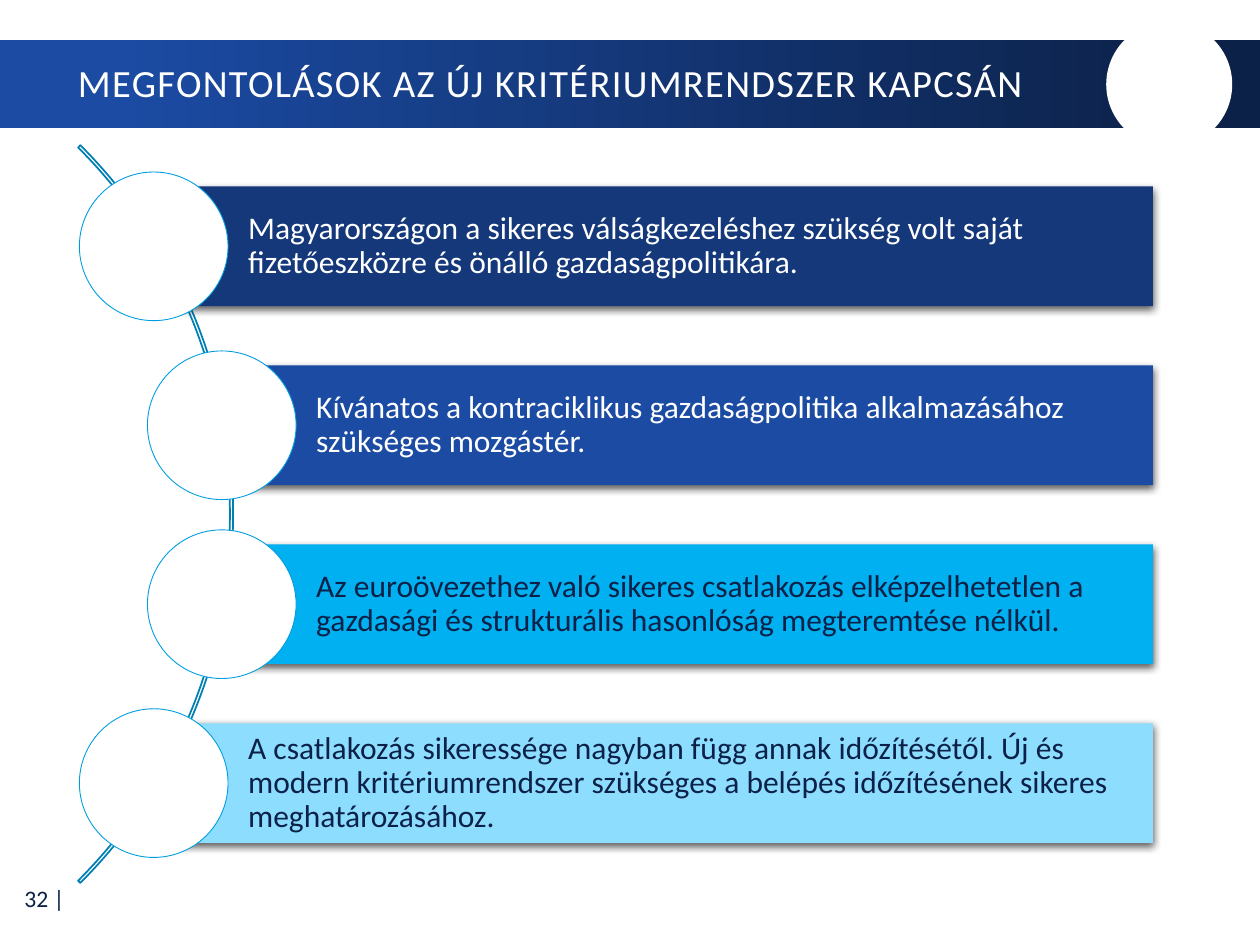
from lxml.etree import SubElement
from pptx import Presentation
from pptx.dml.color import RGBColor
from pptx.enum.shapes import MSO_SHAPE as Shape
from pptx.enum.text import MSO_ANCHOR as Anchor, PP_ALIGN as Align
from pptx.oxml.ns import qn
from pptx.util import Inches, Pt

COLORS = {
    "white": "FFFFFF",
    "navy": "0C2148",
    "deep": "14387A",
    "royal": "1B4BA3",
    "cyan": "00B0F0",
    "pale": "8DDDFF",
    "ring": "009EE0",
    "arc": "007FB3",
}

POINTS = [
    ("Magyarországon a sikeres válságkezeléshez szükség volt saját fizetőeszközre "
     "és önálló gazdaságpolitikára.", "deep", "white", 1.22),
    ("Kívánatos a kontraciklikus gazdaságpolitika alkalmazásához szükséges mozgástér.",
     "royal", "white", 1.76),
    ("Az euroövezethez való sikeres csatlakozás elképzelhetetlen a gazdasági és "
     "strukturális hasonlóság megteremtése nélkül.", "cyan", "navy", 1.76),
    ("A csatlakozás sikeressége nagyban függ annak időzítésétől. Új és modern "
     "kritériumrendszer szükséges a belépés időzítésének sikeres meghatározásához.",
     "pale", "navy", 1.22),
]

BAR_RIGHT, BAR_TOP, BAR_HEIGHT, BAR_PITCH = 9.15, 1.48, 0.95, 1.42
CIRCLE = 1.18


class Deck:
    font = "Calibri"

    def __init__(self, prs):
        self.s = prs.slides.add_slide(prs.slide_layouts[6])

    def color(self, name):
        return RGBColor.from_string(COLORS[name])

    def shape(self, kind, box, fill=None, line=None, width=1):
        sp = self.s.shapes.add_shape(kind, *map(Inches, box))
        sp.shadow.inherit = False
        if fill:
            sp.fill.solid()
            sp.fill.fore_color.rgb = self.color(fill)
        else:
            sp.fill.background()
        if line:
            sp.line.color.rgb = self.color(line)
            sp.line.width = Pt(width)
        else:
            sp.line.fill.background()
        return sp

    def gradient(self, box, stops):
        sp = self.shape(Shape.RECTANGLE, box)
        sp.fill.gradient()
        sp.fill.gradient_angle = 0
        for stop, (position, name) in zip(sp.fill.gradient_stops, stops):
            stop.position = position
            stop.color.rgb = self.color(name)

    def set_text(self, sp, text, size, color, align=Align.LEFT, spacing=0.9,
                 insets=(0.1, 0.05, 0.1, 0.05)):
        tf = sp.text_frame
        tf.word_wrap = True
        tf.vertical_anchor = Anchor.MIDDLE
        (tf.margin_left, tf.margin_top,
         tf.margin_right, tf.margin_bottom) = map(Inches, insets)
        tf.text = text
        p = tf.paragraphs[0]
        p.alignment = align
        p.line_spacing = spacing
        r = p.runs[0]
        r.font.name = self.font
        r.font.size = Pt(size)
        r.font.color.rgb = self.color(color)
        return r

    def label(self, box, text, size, color, **style):
        sp = self.s.shapes.add_textbox(*map(Inches, box))
        return self.set_text(sp, text, size, color, **style)

    def bar(self, box, text, fill, color):
        sp = self.shape(Shape.RECTANGLE, box, fill)
        effects = sp._element.spPr.find(qn("a:effectLst"))
        shadow = SubElement(effects, qn("a:outerShdw"), blurRad=str(Pt(4.5)),
                            dist=str(Pt(1.5)), dir="5400000", rotWithShape="0")
        black = SubElement(shadow, qn("a:srgbClr"), val="000000")
        SubElement(black, qn("a:alpha"), val="63000")
        self.set_text(sp, text, 18, color, insets=(0.75, 0.05, 0.05, 0.05))

    def arc(self, box, adjustments):
        sp = self.shape(Shape.BLOCK_ARC, box, line="arc")
        for i, value in enumerate(adjustments):
            sp.adjustments[i] = value


def main():
    prs = Presentation()
    prs.slide_width, prs.slide_height = Inches(10), Inches(7.5)
    deck = Deck(prs)

    deck.label((0.01, 6.94, 0.6, 0.37), "32 |", 13.5, "navy",
               align=Align.RIGHT, spacing=1.0)
    deck.gradient((0, 0.32, 10, 0.7), [(0.09, "royal"), (0.95, "navy")])
    deck.shape(Shape.OVAL, (8.78, 0.17, 1, 1), "white")
    title = deck.label((0.52, 0.34, 8.32, 0.67),
                       "MEGFONTOLÁSOK AZ ÚJ KRITÉRIUMRENDSZER KAPCSÁN", 22, "white")
    title.font._element.set("spc", "80")

    deck.arc((-6.43, -0.06, 8.28, 8.28), (189, 27, 0.003))
    for i, (text, fill, color, left) in enumerate(POINTS):
        top = BAR_TOP + i * BAR_PITCH
        deck.bar((left, top, BAR_RIGHT - left, BAR_HEIGHT), text, fill, color)
        deck.shape(Shape.OVAL,
                   (left - CIRCLE / 2, top + (BAR_HEIGHT - CIRCLE) / 2, CIRCLE, CIRCLE),
                   "white", "ring", 0.5)

    prs.save("out.pptx")


if __name__ == "__main__":
    main()
